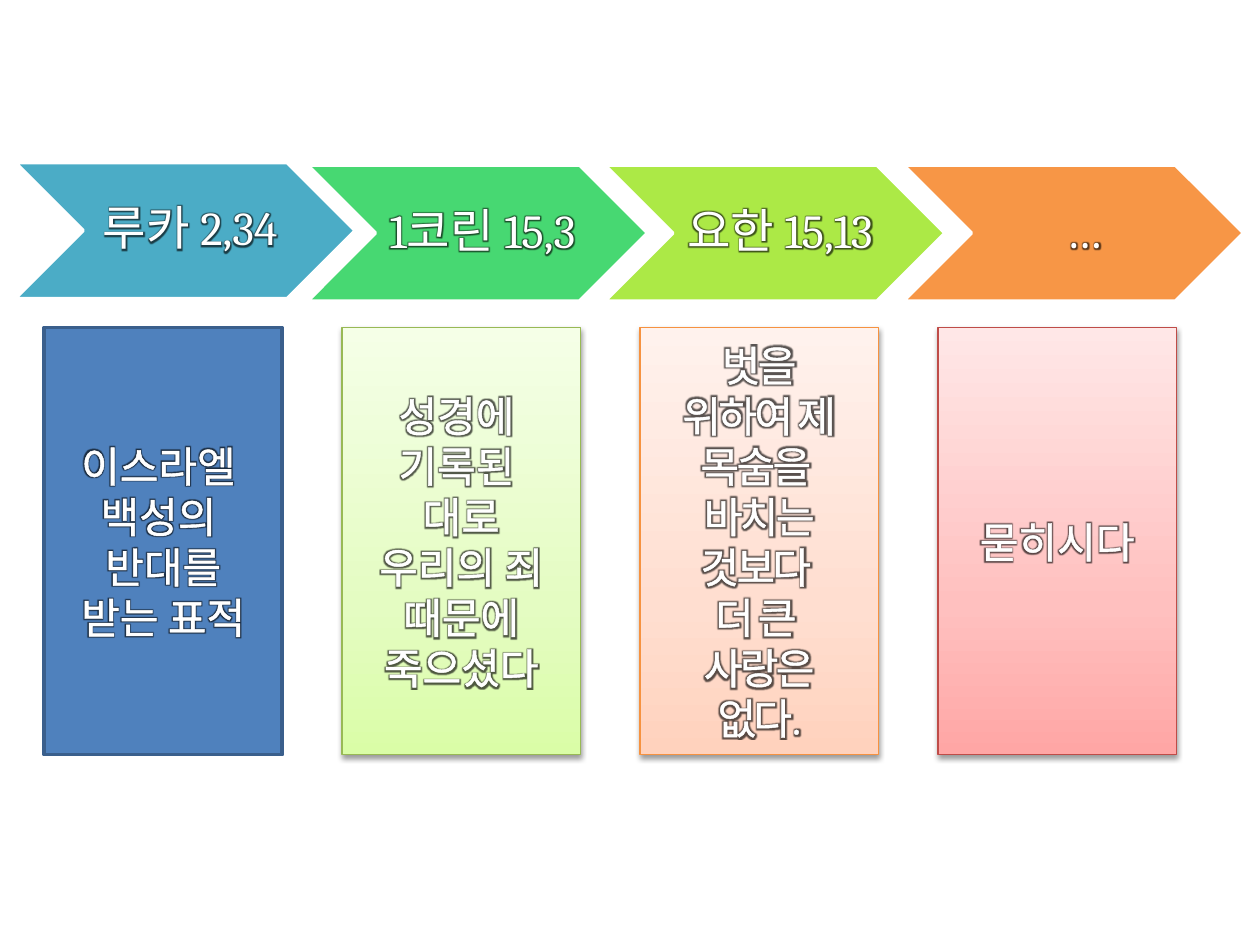
import pptx
import pptx.dml.color
import pptx.enum.shapes
import pptx.enum.text
import pptx.oxml
import pptx.oxml.ns
import pptx.util

Inches = pptx.util.Inches
Pt = pptx.util.Pt
SHAPE = pptx.enum.shapes.MSO_SHAPE
NS = pptx.oxml.ns.nsdecls("a")

COLORS = {
    "white": "FFFFFF", "black": "000000",
    "teal": "4BACC6", "green": "47D872", "lime": "ACE946", "orange": "F79646",
    "blue": "4F81BD", "blue edge": "3A5F8C",
    "green edge": "98B955", "orange edge": "F69240", "red edge": "BF4C48",
}
GRADIENTS = {  # bottom, 35 % of the way up, top
    "green": ("DAFDA7", "E4FCC2", "F5FFE7"),
    "orange": ("FFD2BD", "FFDED0", "FFF2ED"),
    "red": ("FFA6A5", "FFC0BF", "FFE7E7"),
}
STOPS = (0, 35, 100)

# text, fill, left, top
CHEVRONS = [
    ("루카 2,34", "teal", 0.12, 1.29),
    ("1코린 15,3", "green", 2.44, 1.31),
    ("요한 15,13", "lime", 4.8, 1.31),
    (" …", "orange", 7.17, 1.31),
]
CHEVRON_SIZE = (2.7, 1.08)

# lines, gradient (None is plain blue), edge, edge width, letter spacing
PANELS = [
    (["이스라엘 ", "백성의 ", "반대를", "받는 표적"], None, "blue edge", 2, 0),
    (["성경에 ", "기록된 ", "대로", "우리의 죄", "때문에", "죽으셨다"],
     "green", "green edge", 0.75, 0),
    (["벗을", "위하여 제", "목숨을 ", "바치는", "것보다 ", "더 큰 ", "사랑은", "없다."],
     "orange", "orange edge", 0.75, -1.5),
    (["묻히시다"], "red", "red edge", 0.75, 0),
]
PANEL_LEFT, PANEL_TOP, PANEL_PITCH = 0.35, 2.6, 2.365
PANEL_SIZE = (1.89, 3.39)


def rgb(name):
    return pptx.dml.color.RGBColor.from_string(COLORS[name])


def effect_xml(tag, attributes, opacity):
    return pptx.oxml.parse_xml(
        f'<a:effectLst {NS}><a:{tag} {attributes}><a:srgbClr val="{COLORS["black"]}">'
        f'<a:alpha val="{opacity * 1000}"/></a:srgbClr></a:{tag}></a:effectLst>')


def shadow_xml(blur, distance, angle, opacity):
    return effect_xml("outerShdw", f'blurRad="{Pt(blur)}" dist="{Pt(distance)}" '
                      f'dir="{angle * 60000}" rotWithShape="0"', opacity)


def glow_xml(radius, opacity):
    return effect_xml("glow", f'rad="{Pt(radius)}"', opacity)


def outline_xml(width):
    return pptx.oxml.parse_xml(
        f'<a:ln {NS} w="{Pt(width)}"><a:solidFill>'
        f'<a:srgbClr val="{COLORS["white"]}"/></a:solidFill></a:ln>')


def gradient_xml(colors):
    stops = "".join(f'<a:gs pos="{stop * 1000}"><a:srgbClr val="{color}"/></a:gs>'
                    for stop, color in zip(STOPS, colors))
    return pptx.oxml.parse_xml(
        f'<a:gradFill {NS} rotWithShape="1"><a:gsLst>{stops}</a:gsLst>'
        '<a:lin ang="16200000" scaled="0"/></a:gradFill>')


def write(shape, lines, size, line_spacing=None, outline=None, letter_spacing=0):
    frame = shape.text_frame
    frame.word_wrap = True
    frame.vertical_anchor = pptx.enum.text.MSO_ANCHOR.MIDDLE
    for index, line in enumerate(lines):
        para = frame.add_paragraph() if index else frame.paragraphs[0]
        para.alignment = pptx.enum.text.PP_ALIGN.CENTER
        para.line_spacing = line_spacing
        span = para.add_run()
        span.text = line
        span.font.size = Pt(size)
        span.font.name = "Cambria"
        span.font.color.rgb = rgb("white")
        properties = span.font._element
        fill = properties.find(pptx.oxml.ns.qn("a:solidFill"))
        fill.addnext(glow_xml(3.6, 65))
        if outline:
            fill.addprevious(outline_xml(outline))
        if letter_spacing:
            properties.set("spc", str(int(letter_spacing * 100)))


def add_block(shapes, kind, place, fill, edge, edge_width):
    block = shapes.add_shape(kind, *map(Inches, place))
    block.shadow.inherit = False
    block.fill.solid()
    block.fill.fore_color.rgb = rgb(fill)
    block.line.color.rgb = rgb(edge)
    block.line.width = Pt(edge_width)
    return block


def add_chevrons(page):
    group = page.shapes.add_group_shape()
    for text, fill, left, top in CHEVRONS:
        place = (left, top, *CHEVRON_SIZE)
        add_block(group.shapes, SHAPE.CHEVRON, place, fill, "white", 2)
        label = group.shapes.add_textbox(*map(Inches, place))
        frame = label.text_frame
        frame.margin_left = Inches(0.12)
        frame.margin_top = frame.margin_right = frame.margin_bottom = Inches(0.04)
        write(label, [text], 27, line_spacing=0.9)


def add_panels(page):
    for index, (lines, gradient, edge, width, spacing) in enumerate(PANELS):
        place = (PANEL_LEFT + index * PANEL_PITCH, PANEL_TOP, *PANEL_SIZE)
        panel = add_block(page.shapes, SHAPE.RECTANGLE, place, "blue", edge, width)
        if gradient:
            properties = panel._element.spPr
            properties.replace(properties.find(pptx.oxml.ns.qn("a:solidFill")),
                               gradient_xml(GRADIENTS[gradient]))
            properties.replace(properties.find(pptx.oxml.ns.qn("a:effectLst")),
                               shadow_xml(3.1, 1.6, 90, 38))
        write(panel, lines, 24, outline=1.45, letter_spacing=spacing)


def main():
    deck = pptx.Presentation()
    deck.slide_width, deck.slide_height = Inches(10), Inches(7.5)
    page = deck.slides.add_slide(deck.slide_layouts[6])
    add_chevrons(page)
    add_panels(page)
    deck.save("out.pptx")


if __name__ == "__main__":
    main()
